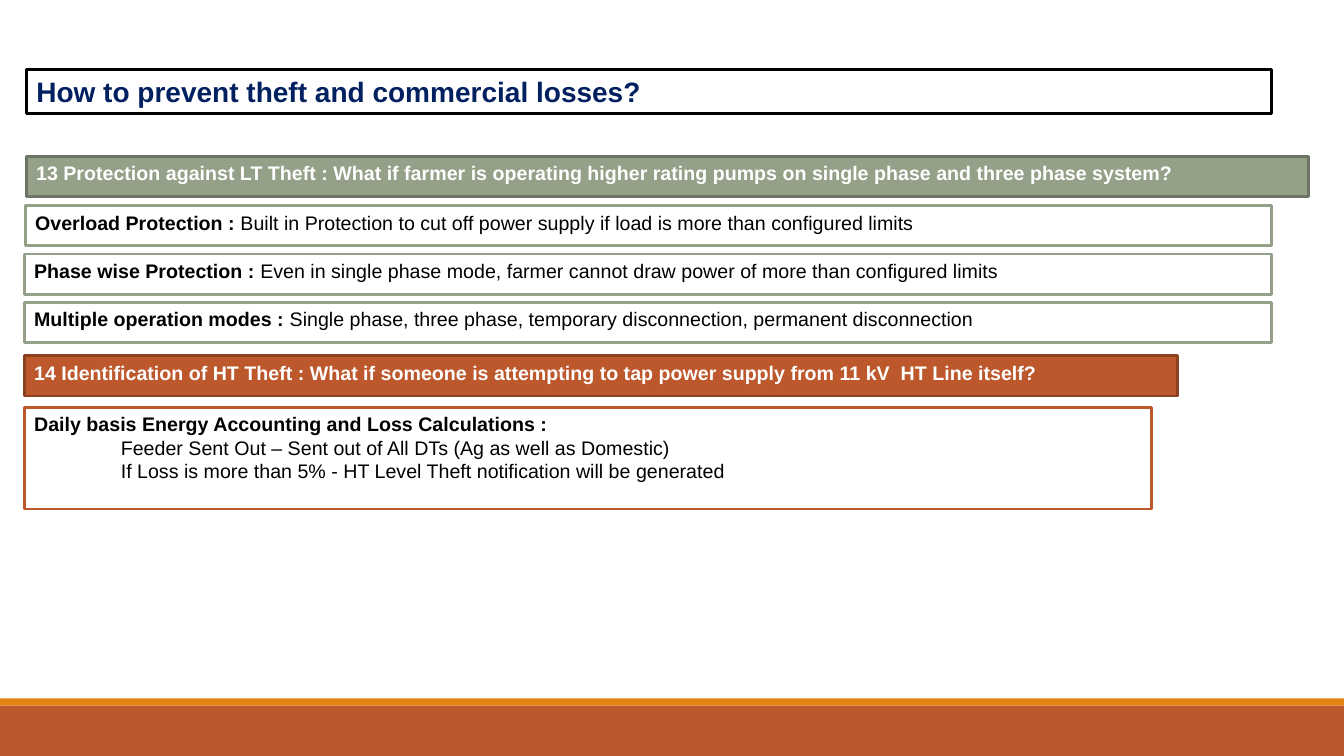
import pptx
import pptx.util
import pptx.dml.color
import pptx.enum.shapes
import pptx.enum.text

THEME = {
    "font": "Arial", "title_size": 20, "text_size": 14, "line": 2,
    "white": "FFFFFF", "black": "000000", "navy": "002060",
    "sage": "94A088", "sage_dark": "6D7665",
    "rust": "BD582C", "rust_dark": "8C4121", "amber": "E48312",
}
PX = 9144  # 100 px to the inch


def rgb(name):
    return pptx.dml.color.RGBColor.from_string(THEME[name])


def style_box(sp, box, fill, line, paragraphs, color="black", size="text_size"):
    """Place and colour a box, then write (indent, [(text, bold), ...]) paragraphs."""
    sp.left, sp.top, sp.width, sp.height = [v * PX for v in box]
    sp.fill.solid()
    sp.fill.fore_color.rgb = rgb(fill)
    sp.line.color.rgb = rgb(line)
    sp.line.width = pptx.util.Pt(THEME["line"])
    tf = sp.text_frame
    tf.word_wrap = True
    tf.auto_size = pptx.enum.text.MSO_AUTO_SIZE.NONE
    tf.vertical_anchor = pptx.enum.text.MSO_ANCHOR.TOP
    for i, (indent, runs) in enumerate(paragraphs):
        p = tf.add_paragraph() if i else tf.paragraphs[0]
        p.alignment = pptx.enum.text.PP_ALIGN.LEFT
        if indent:
            p._p.get_or_add_pPr().set("marL", str(indent * PX))
        for text, bold in runs:
            r = p.add_run()
            r.text = text
            r.font.name = THEME["font"]
            r.font.size = pptx.util.Pt(THEME[size])
            r.font.bold = bold
            r.font.color.rgb = rgb(color)


prs = pptx.Presentation()
prs.slide_width, prs.slide_height = 1333 * PX, 750 * PX
s = prs.slides.add_slide(prs.slide_layouts[5])
RECT = pptx.enum.shapes.MSO_SHAPE.RECTANGLE

# Footer bands
for top, height, color in [(700, 50, "rust"), (693, 7, "amber")]:
    sp = s.shapes.add_shape(RECT, 0, top * PX, prs.slide_width, height * PX)
    sp.shadow.inherit = False
    sp.fill.solid()
    sp.fill.fore_color.rgb = rgb(color)
    sp.line.fill.background()

# Title
style_box(s.shapes.title, (26, 69, 1235, 44), "white", "black",
          [(0, [("How to prevent theft and commercial losses?", True)])],
          "navy", "title_size")

# Section headings and their answers
boxes = [
    ((26, 155, 1272, 40), "sage", "sage_dark", "white",
     [(0, [("13 Protection against LT Theft : What if farmer is operating higher "
            "rating pumps on single phase and three phase system?", True)])]),
    ((25, 204, 1236, 40), "white", "sage", "black",
     [(0, [("Overload Protection : ", True),
           ("Built in Protection to cut off power supply if load is more than "
            "configured limits", False)])]),
    ((24, 252, 1237, 40), "white", "sage", "black",
     [(0, [("Phase wise Protection : ", True),
           ("Even in single phase mode, farmer cannot draw power of more than "
            "configured limits", False)])]),
    ((24, 300, 1237, 40), "white", "sage", "black",
     [(0, [("Multiple operation modes : ", True),
           ("Single phase, three phase, temporary disconnection, permanent "
            "disconnection", False)])]),
    ((24, 353, 1144, 40), "rust", "rust_dark", "white",
     [(0, [("14 Identification of HT Theft : What if someone is attempting to tap "
            "power supply from 11 kV  HT Line itself?", True)])]),
    ((24, 404, 1118, 101), "white", "rust", "black",
     [(0, [("Daily basis Energy Accounting and Loss Calculations :", True)]),
      (86, [("Feeder Sent Out – Sent out of All DTs (Ag as well as Domestic)", False)]),
      (86, [("If Loss is more than 5% - HT Level Theft notification will be "
             "generated", False)])]),
]
for box, fill, line, color, paragraphs in boxes:
    sp = s.shapes.add_shape(RECT, 0, 0, PX, PX)
    sp.shadow.inherit = False
    style_box(sp, box, fill, line, paragraphs, color)

prs.save("out.pptx")
